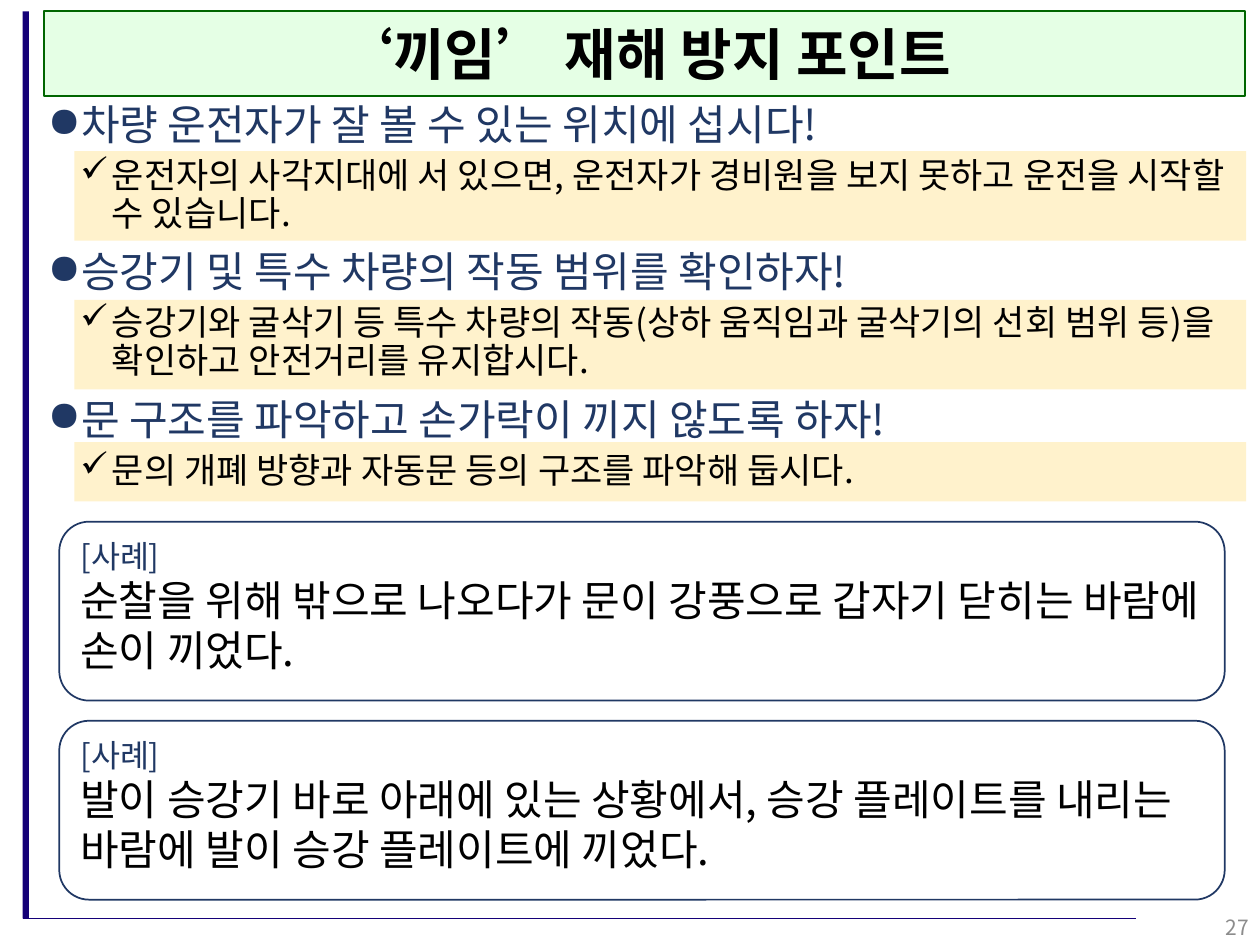
from lxml import etree
from pptx import Presentation
from pptx.dml.color import RGBColor
from pptx.enum.shapes import MSO_CONNECTOR, MSO_SHAPE
from pptx.enum.text import MSO_ANCHOR, PP_ALIGN
from pptx.oxml.ns import qn
from pptx.util import Inches, Pt

RECTANGLE = MSO_SHAPE.RECTANGLE
ROUNDED = MSO_SHAPE.ROUNDED_RECTANGLE
STRAIGHT = MSO_CONNECTOR.STRAIGHT
TOP, MIDDLE = MSO_ANCHOR.TOP, MSO_ANCHOR.MIDDLE
LEFT, CENTER, RIGHT = PP_ALIGN.LEFT, PP_ALIGN.CENTER, PP_ALIGN.RIGHT

FONT = "Noto Sans CJK JP"
COLORS = {
    "frame": "140078",
    "band": "FFF2CC",
    "title_fill": "CCFFCC",
    "title_line": "006600",
    "navy": "203864",
    "black": "000000",
    "white": "FFFFFF",
    "gray": "8C8C8C",
}

# Heading, text indent of the heading, advice
POINTS = [
    ("차량 운전자가 잘 볼 수 있는 위치에 섭시다!", 0.25,
     "운전자의 사각지대에 서 있으면, 운전자가 경비원을 보지 못하고 운전을 시작할 수 있습니다."),
    ("승강기 및 특수 차량의 작동 범위를 확인하자!", 0.01,
     "승강기와 굴삭기 등 특수 차량의 작동(상하 움직임과 굴삭기의 선회 범위 등)을 "
     "확인하고 안전거리를 유지합시다."),
    ("문 구조를 파악하고 손가락이 끼지 않도록 하자!", 0.01,
     "문의 개폐 방향과 자동문 등의 구조를 파악해 둡시다."),
]
BANDS = [(1.2, 0.71), (2.38, 0.71), (3.51, 0.47)]  # top, height
CASES = [
    "순찰을 위해 밖으로 나오다가 문이 강풍으로 갑자기 닫히는 바람에 손이 끼었다.",
    "발이 승강기 바로 아래에 있는 상황에서, 승강 플레이트를 내리는 바람에 발이 승강 플레이트에 끼었다.",
]


def color(name):
    return RGBColor.from_string(COLORS[name])


def add_box(slide, kind, left, top, width, height, fill, line=None):
    shape = slide.shapes.add_shape(
        kind, Inches(left), Inches(top), Inches(width), Inches(height))
    shape.shadow.inherit = False
    shape.fill.solid()
    shape.fill.fore_color.rgb = color(fill)
    if line:
        shape.line.color.rgb = color(line)
        shape.line.width = Pt(1)
    else:
        shape.line.fill.background()
    return shape


def add_text_box(slide, left, top, width, height):
    return slide.shapes.add_textbox(
        Inches(left), Inches(top), Inches(width), Inches(height))


def set_transparency(shape, opacity):
    fill_color = shape.fill._xPr.find(qn("a:solidFill"))[0]
    etree.SubElement(fill_color, qn("a:alpha")).set("val", str(opacity * 1000))


def write(shape, lines, align=LEFT, anchor=TOP):
    """Fill a shape with (text, size, color) lines and return the paragraphs."""
    frame = shape.text_frame
    frame.word_wrap = True
    frame.vertical_anchor = anchor
    for index, (text, size, font_color) in enumerate(lines):
        paragraph = frame.add_paragraph() if index else frame.paragraphs[0]
        paragraph.text = text
        paragraph.alignment = align
        paragraph.font.name = FONT
        paragraph.font.size = Pt(size)
        paragraph.font.color.rgb = color(font_color)
        # Hangul takes the East Asian typeface
        defaults = paragraph._p.pPr.find(qn("a:defRPr"))
        etree.SubElement(defaults, qn("a:ea")).set("typeface", FONT)
    return frame.paragraphs


def set_bullet(paragraph, character, margin, space_before):
    paragraph.line_spacing = 0.9
    paragraph.space_before = Pt(space_before)
    properties = paragraph._p.pPr
    properties.set("marL", str(Inches(margin)))
    properties.set("indent", str(Inches(-0.25)))
    bullet = etree.Element(qn("a:buChar"))
    bullet.set("char", character)
    properties.find(qn("a:defRPr")).addprevious(bullet)


def add_frame(slide):
    add_box(slide, RECTANGLE, 0.18, 0.09, 0.05, 7.2, "frame")
    line = slide.shapes.add_connector(
        STRAIGHT, Inches(0.18), Inches(7.29), Inches(9.02), Inches(7.29))
    line.line.color.rgb = color("frame")
    line.line.width = Pt(1)
    etree.SubElement(line._element.spPr, qn("a:effectLst"))


def add_title(slide, text):
    shape = add_box(slide, RECTANGLE, 0.35, 0.09, 9.53, 0.67,
                    "title_fill", "title_line")
    set_transparency(shape, 50)
    write(shape, [(text, 32, "black")], CENTER, MIDDLE)[0].font.bold = True


def add_points(slide):
    for top, height in BANDS:
        add_box(slide, RECTANGLE, 0.59, top, 9.3, height, "band")
    lines = []
    for heading, _, advice in POINTS:
        lines += [(heading, 24, "navy"), (advice, 20, "black")]
    paragraphs = write(add_text_box(slide, 0.28, 0.78, 9.68, 3.25), lines)
    for (_, margin, _), heading, advice in zip(
            POINTS, paragraphs[::2], paragraphs[1::2]):
        set_bullet(heading, "●", margin, 10)
        advice.level = 1
        set_bullet(advice, "✓", 0.51, 5)


def add_case(slide, top, text):
    shape = add_box(slide, ROUNDED, 0.47, top, 9.25, 1.42, "white", "navy")
    write(shape, [("[사례]", 18, "navy"), (text, 24, "black")])


def main():
    presentation = Presentation()
    presentation.slide_width = Inches(10)
    presentation.slide_height = Inches(7.5)
    slide = presentation.slides.add_slide(presentation.slide_layouts[6])

    add_frame(slide)
    add_title(slide, "‘끼임’ 재해 방지 포인트")
    add_points(slide)
    for index, text in enumerate(CASES):
        add_case(slide, 4.14 + 1.58 * index, text)

    # Page number
    write(add_text_box(slide, 7.76, 7.16, 2.25, 0.4),
          [("27", 12, "gray")], RIGHT, MIDDLE)

    presentation.save("out.pptx")


if __name__ == "__main__":
    main()
